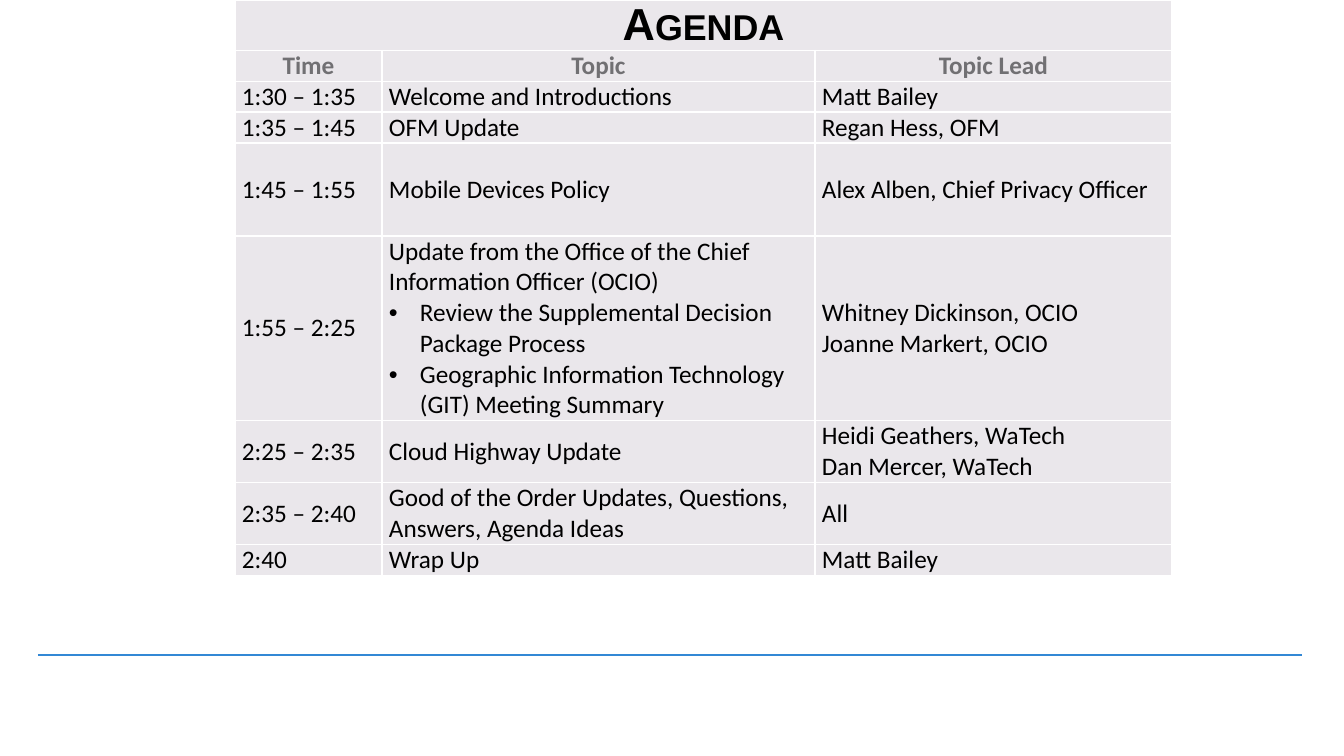
from lxml import etree
from pptx import Presentation
from pptx import util as u
from pptx.dml.color import RGBColor
from pptx.enum import shapes, text
from pptx.oxml.ns import qn

TITLE = "Agenda"
HEADERS = ("Time", "Topic", "Topic Lead")
BULLET = "• "  # marks the lines that become list items
# time, topic lines, lead lines, row height in px
SESSIONS = [
    ("1:30 – 1:35", ["Welcome and Introductions"], ["Matt Bailey"], 30),
    ("1:35 – 1:45", ["OFM Update"], ["Regan Hess, OFM"], 31),
    ("1:45 – 1:55", ["Mobile Devices Policy"], ["Alex Alben, Chief Privacy Officer"], 93),
    ("1:55 – 2:25",
     ["Update from the Office of the Chief Information Officer (OCIO)",
      BULLET + "Review the Supplemental Decision Package Process",
      BULLET + "Geographic Information Technology (GIT) Meeting Summary"],
     ["Whitney Dickinson, OCIO", "Joanne Markert, OCIO"], 184),
    ("2:25 – 2:35", ["Cloud Highway Update"],
     ["Heidi Geathers, WaTech", "Dan Mercer, WaTech"], 62),
    ("2:35 – 2:40", ["Good of the Order Updates, Questions, Answers, Agenda Ideas"],
     ["All"], 62),
    ("2:40", ["Wrap Up"], ["Matt Bailey"], 30),
]

THEME = {
    "title_font": "Arial", "title_size": 32,
    "body_font": "Calibri", "body_size": 18,
    "ink": "000000", "header": "717073", "cell": "EAE7EB",
    "border": "FFFFFF", "border_width": 1,
    "rule": "3388D5", "rule_width": 1.5,
}

SLIDE_W, SLIDE_H = 1344, 756
TABLE_LEFT, TABLE_TOP = 235, 0
COLUMNS = (147, 433, 357)
TITLE_H, HEADER_H = 50, 31
RULE_LEFT, RULE_RIGHT, RULE_Y = 38, 1302, 655
CELL_INSET, BULLET_INDENT = 7, 31


def px(n):
    return u.Emu(round(n * 914400 / 100.8))


def color(name):
    return RGBColor.from_string(THEME[name])


def add_borders(cell):
    """Put the border lines ahead of the fill, as the schema requires."""
    tcPr = cell._tc.get_or_add_tcPr()
    for i, side in enumerate(("lnL", "lnR", "lnT", "lnB")):
        ln = etree.Element(qn("a:" + side), w=str(u.Pt(THEME["border_width"])))
        fill = etree.SubElement(ln, qn("a:solidFill"))
        etree.SubElement(fill, qn("a:srgbClr"), val=THEME["border"])
        tcPr.insert(i, ln)


def add_bullet(p):
    pPr = p._p.get_or_add_pPr()
    pPr.set("marL", str(px(BULLET_INDENT)))
    pPr.set("indent", str(-px(BULLET_INDENT)))
    etree.SubElement(pPr, qn("a:buFont"), typeface="Arial")
    etree.SubElement(pPr, qn("a:buChar"), char=BULLET.strip())


def fill_cell(cell, lines, kind="body", ink="ink", bold=False, centred=False):
    cell.fill.solid()
    cell.fill.fore_color.rgb = color("cell")
    add_borders(cell)
    cell.margin_left = cell.margin_right = px(CELL_INSET)
    cell.margin_top = cell.margin_bottom = 0
    cell.vertical_anchor = text.MSO_ANCHOR.TOP if centred else text.MSO_ANCHOR.MIDDLE
    tf = cell.text_frame
    tf.text = "\n".join(line.removeprefix(BULLET) for line in lines)
    for p, line in zip(tf.paragraphs, lines):
        p.alignment = text.PP_ALIGN.CENTER if centred else text.PP_ALIGN.LEFT
        if line.startswith(BULLET):
            add_bullet(p)
        for r in p.runs:
            r.font.name = THEME[kind + "_font"]
            r.font.size = u.Pt(THEME[kind + "_size"])
            r.font.bold = bold
            r.font.color.rgb = color(ink)


def add_agenda(slide):
    heights = [TITLE_H, HEADER_H] + [session[-1] for session in SESSIONS]
    frame = slide.shapes.add_table(
        len(heights), len(COLUMNS), px(TABLE_LEFT), px(TABLE_TOP),
        px(sum(COLUMNS)), px(sum(heights)))
    table = frame.table
    table.first_row = table.horz_banding = False
    for column, width in zip(table.columns, COLUMNS):
        column.width = px(width)
    for row, height in zip(table.rows, heights):
        row.height = px(height)

    title = table.cell(0, 0)
    title.merge(table.cell(0, len(COLUMNS) - 1))
    fill_cell(title, [TITLE], kind="title", bold=True, centred=True)
    title.text_frame.paragraphs[0].runs[0].font._element.set("cap", "small")
    for c, header in enumerate(HEADERS):
        fill_cell(table.cell(1, c), [header], ink="header", bold=True, centred=True)
    for row, (time, topic, lead, _) in enumerate(SESSIONS, start=2):
        for c, lines in enumerate(([time], topic, lead)):
            fill_cell(table.cell(row, c), lines)


def add_rule(slide):
    rule = slide.shapes.add_connector(
        shapes.MSO_CONNECTOR.STRAIGHT,
        px(RULE_LEFT), px(RULE_Y), px(RULE_RIGHT), px(RULE_Y))
    rule.line.color.rgb = color("rule")
    rule.line.width = u.Pt(THEME["rule_width"])
    etree.SubElement(rule._element.spPr, qn("a:effectLst"))


def main():
    prs = Presentation()
    prs.slide_width, prs.slide_height = px(SLIDE_W), px(SLIDE_H)
    slide = prs.slides.add_slide(prs.slide_layouts[6])
    add_rule(slide)
    add_agenda(slide)
    prs.save("out.pptx")


if __name__ == "__main__":
    main()
